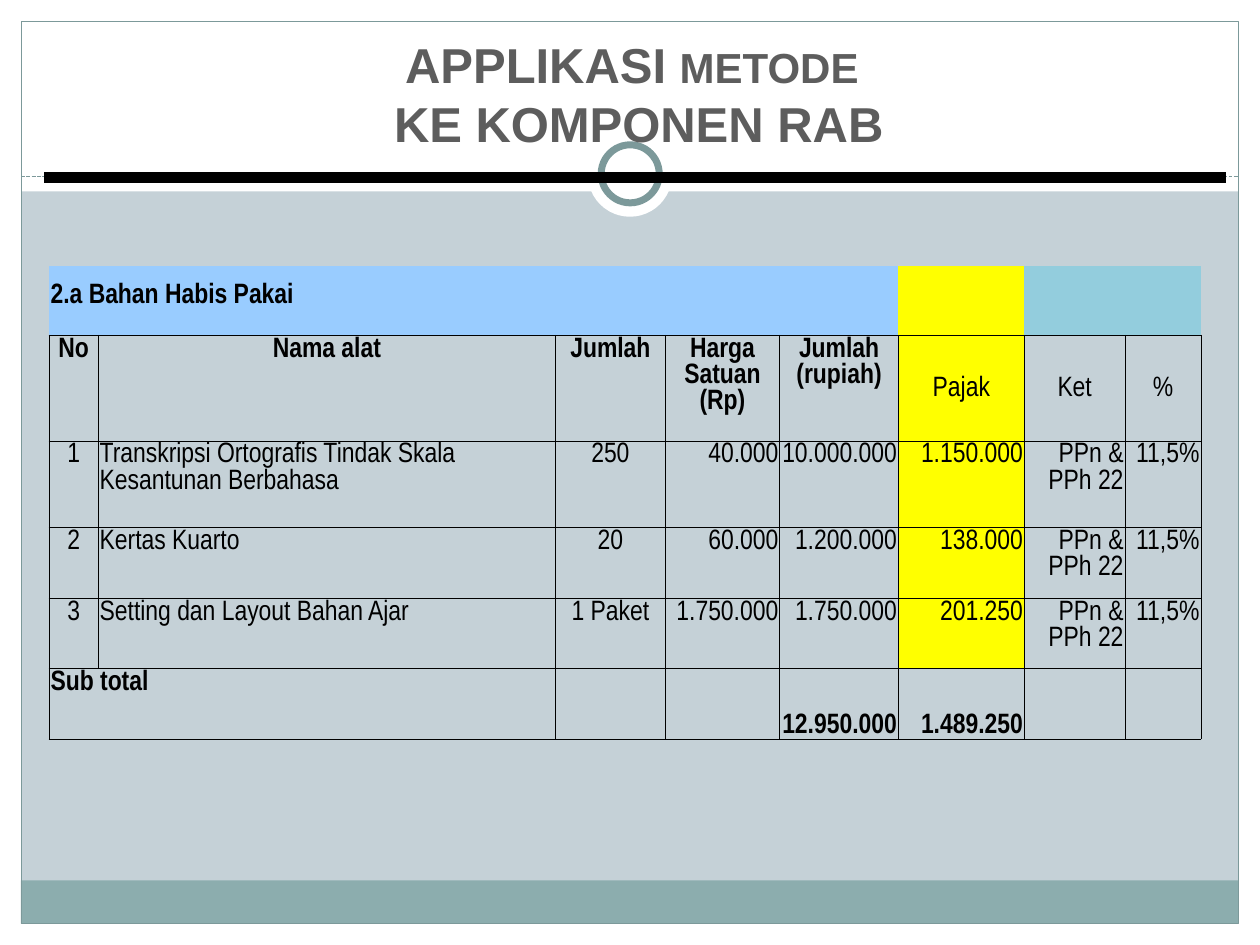
"""Build the budget slide with the table of consumable materials."""
from lxml.etree import SubElement
from pptx import Presentation
from pptx.dml.color import RGBColor
from pptx.enum.dml import MSO_LINE
from pptx.enum.shapes import MSO_CONNECTOR, MSO_SHAPE
from pptx.enum.text import MSO_ANCHOR, MSO_AUTO_SIZE, PP_ALIGN
from pptx.oxml.ns import qn
from pptx.util import Cm, Pt


def paint(fill, colour):
    fill.solid()
    fill.fore_color.rgb = RGBColor.from_string(colour)


def add_border(cell, side, visible):
    line = SubElement(cell._tc.get_or_add_tcPr(), qn(f"a:ln{side}"), w=str(Pt(0.5)))
    if visible:
        solid = SubElement(line, qn("a:solidFill"))
        SubElement(solid, qn("a:srgbClr"), val="000000")
    else:
        SubElement(line, qn("a:noFill"))


deck = Presentation()
deck.slide_width, deck.slide_height = Cm(25.4), Cm(19.05)
page = deck.slides.add_slide(deck.slide_layouts[5])
paint(page.background.fill, "C5D1D7")

frame_parts = [
    (MSO_SHAPE.RECTANGLE, 0, 18.62, 25.4, 0.43, "FFFFFF", None),
    (MSO_SHAPE.RECTANGLE, 0, 0, 25.4, 3.86, "FFFFFF", None),
    (MSO_SHAPE.RECTANGLE, 0, 0, 0.43, 19.05, "FFFFFF", None),
    (MSO_SHAPE.RECTANGLE, 24.97, 0, 0.43, 19.05, "FFFFFF", None),
    (MSO_SHAPE.RECTANGLE, 0.42, 17.75, 24.54, 0.87, "8CADAE", None),
    (MSO_SHAPE.RECTANGLE, 0.43, 0.43, 24.54, 18.19, None, 0.75),
    (MSO_SHAPE.OVAL, 11.85, 2.67, 1.7, 1.7, "FFFFFF", None),
    (MSO_SHAPE.OVAL, 12.12, 2.92, 1.17, 1.17, "FFFFFF", 4),
]
rules = [
    (0.43, 24.97, 3.56, "7C999A", 0.75, MSO_LINE.SQUARE_DOT),
    (0.89, 24.71, 3.58, "000000", 6, MSO_LINE.SOLID),
]
connectors = []
for start, end, height, colour, weight, dash in rules:
    rule = page.shapes.add_connector(
        MSO_CONNECTOR.STRAIGHT, Cm(start), Cm(height), Cm(end), Cm(height))
    paint(rule.line.fill, colour)
    rule.line.width = Pt(weight)
    rule.line.dash_style = dash
    SubElement(rule.element.spPr, qn("a:effectLst"))
    connectors.append(rule)

for kind, left, top, width, height, colour, weight in frame_parts:
    shape = page.shapes.add_shape(kind, Cm(left), Cm(top), Cm(width), Cm(height))
    shape.shadow.inherit = False
    if colour:
        paint(shape.fill, colour)
    else:
        shape.fill.background()
    if weight:
        paint(shape.line.fill, "7C999A")
        shape.line.width = Pt(weight)
    else:
        shape.line.fill.background()
    if kind == MSO_SHAPE.RECTANGLE:
        connectors[0].element.addprevious(shape.element)

title = page.shapes.title
title.left, title.top, title.width, title.height = Cm(2.97), Cm(1.19), Cm(19.81), Cm(1.4)
title.text_frame.auto_size = MSO_AUTO_SIZE.NONE
title.text_frame.vertical_anchor = MSO_ANCHOR.MIDDLE
title_lines = [
    [("APPLIKASI ", 28), ("METODE", 24), (" ", 28)],
    [("KE KOMPONEN RAB", 28)],
]
for index, line in enumerate(title_lines):
    para = title.text_frame.add_paragraph() if index else title.text_frame.paragraphs[0]
    para.alignment = PP_ALIGN.CENTER
    for text, size in line:
        span = para.add_run()
        span.text = text
        span.font.name, span.font.size, span.font.bold = "Arial", Pt(size), True
        paint(span.font.fill, "5D5D5D")
for element in (title.element, connectors[1].element):
    element.getparent().append(element)

rows = [
    ["2.a Bahan Habis Pakai", "", "", "", "", "", "", ""],
    ["No", "Nama alat", "Jumlah", "Harga Satuan (Rp)", "Jumlah (rupiah)", "Pajak", "Ket", "%"],
    ["1", "Transkripsi Ortografis Tindak Skala Kesantunan Berbahasa", "250",
     "40.000", "10.000.000", "1.150.000", "PPn & PPh 22", "11,5%"],
    ["2", "Kertas Kuarto", "20", "60.000", "1.200.000", "138.000", "PPn & PPh 22", "11,5%"],
    ["3", "Setting dan Layout Bahan Ajar", "1 Paket",
     "1.750.000", "1.750.000", "201.250", "PPn & PPh 22", "11,5%"],
    ["Sub total", "", "", "", "12.950.000", "1.489.250", "", ""],
]
column_widths = [0.99, 9.22, 2.21, 2.31, 2.39, 2.54, 2.03, 1.53]
row_heights = [1.4, 2.13, 1.75, 1.42, 1.42, 1.42]
alignments = [PP_ALIGN.CENTER, PP_ALIGN.LEFT, PP_ALIGN.CENTER] + [PP_ALIGN.RIGHT] * 5
header, total = 1, len(rows) - 1
tax = 5

table = page.shapes.add_table(
    len(rows), len(column_widths), Cm(0.99), Cm(5.36),
    Cm(sum(column_widths)), Cm(sum(row_heights))).table
table.first_row = table.horz_banding = False
for column, width in zip(table.columns, column_widths):
    column.width = Cm(width)
for row, height in zip(table.rows, row_heights):
    row.height = Cm(height)

for r, texts in enumerate(rows):
    for c, text in enumerate(texts):
        cell = table.cell(r, c)
        cell.margin_left = cell.margin_right = cell.margin_top = Cm(0.03)
        cell.margin_bottom = Cm(0.53) if r == 0 else 0
        for side in "LRTB":
            add_border(cell, side, r > 0 or side == "B")
        if r == 0:
            paint(cell.fill, "99CCFF" if c < tax else "FFFF00" if c == tax else "93CDDD")
        elif c == tax and r < total:
            paint(cell.fill, "FFFF00")
        else:
            cell.fill.background()
        if r == 0 or (r == total and c > 0):
            cell.vertical_anchor = MSO_ANCHOR.BOTTOM
        elif r == header and c >= tax:
            cell.vertical_anchor = MSO_ANCHOR.MIDDLE
        else:
            cell.vertical_anchor = MSO_ANCHOR.TOP
        if text:
            para = cell.text_frame.paragraphs[0]
            if r == header:
                para.alignment = PP_ALIGN.CENTER
            elif r in (0, total) and c == 0:
                para.alignment = PP_ALIGN.LEFT
            else:
                para.alignment = alignments[c]
            span = para.add_run()
            span.text = text
            span.font.name, span.font.size = "Arial Narrow", Pt(16)
            span.font.bold = r in (0, total) or (r == header and c < tax)
            paint(span.font.fill, "000000")
table.cell(0, 0).merge(table.cell(0, tax - 1))
table.cell(total, 0).merge(table.cell(total, 1))

deck.save("out.pptx")
